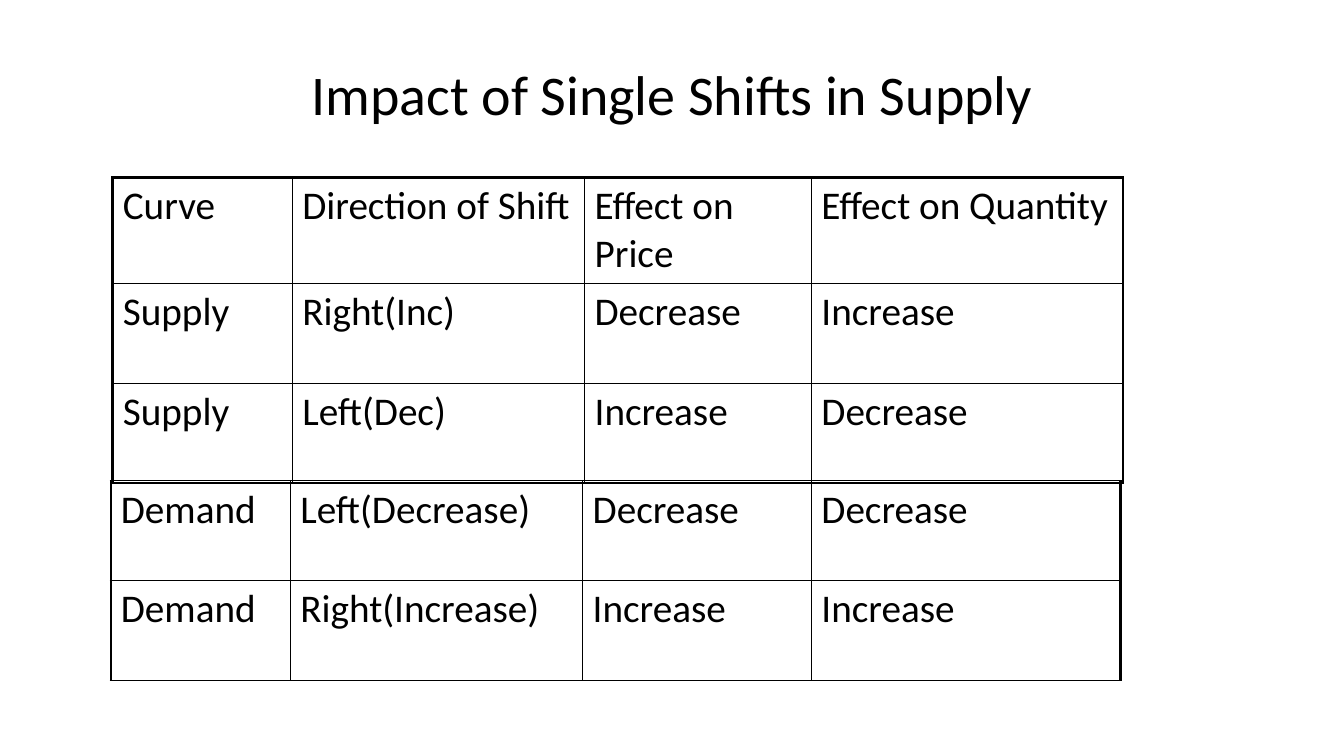
from dataclasses import dataclass

from lxml.etree import SubElement
from pptx import Presentation
from pptx.dml.color import RGBColor
from pptx.enum.text import MSO_ANCHOR, PP_ALIGN
from pptx.oxml.ns import qn
from pptx.util import Pt


@dataclass(frozen=True)
class Theme:
    font: str = "Calibri"
    ink: str = "000000"
    title_size: float = 40
    cell_size: float = 28
    thin: float = 1
    thick: float = 2.25


class SlideBuilder:
    def __init__(self, slide, theme):
        self.slide = slide
        self.theme = theme

    def style(self, paragraph, size):
        for run in paragraph.runs:
            run.font.name = self.theme.font
            run.font.size = Pt(size)
            run.font.color.rgb = RGBColor.from_string(self.theme.ink)

    def title(self, text, left, top, width, height):
        heading = self.slide.shapes.add_textbox(Pt(left), Pt(top), Pt(width), Pt(height))
        frame = heading.text_frame
        frame.word_wrap = True
        frame.vertical_anchor = MSO_ANCHOR.MIDDLE
        frame.text = text
        frame.paragraphs[0].alignment = PP_ALIGN.CENTER
        self.style(frame.paragraphs[0], self.theme.title_size)

    def border(self, cell, side, width):
        line = SubElement(cell._tc.get_or_add_tcPr(), qn(f"a:ln{side}"), w=str(Pt(width)))
        fill = SubElement(line, qn("a:solidFill"))
        SubElement(fill, qn("a:srgbClr"), val=self.theme.ink)

    def table(self, rows, left, top, widths, heights, thick_sides):
        """Draw a grid of thin lines whose named outer sides are thick."""
        frame = self.slide.shapes.add_table(
            len(rows), len(widths), Pt(left), Pt(top), Pt(sum(widths)), Pt(sum(heights)))
        grid = frame.table
        grid.first_row = grid.horz_banding = False
        for column, width in zip(grid.columns, widths):
            column.width = Pt(width)
        for row, height in zip(grid.rows, heights):
            row.height = Pt(height)

        for r, entries in enumerate(rows):
            for c, entry in enumerate(entries):
                cell = grid.cell(r, c)
                cell.text_frame.text = entry
                self.style(cell.text_frame.paragraphs[0], self.theme.cell_size)
                outer = {"L": c == 0, "R": c == len(widths) - 1,
                         "T": r == 0, "B": r == len(rows) - 1}
                for side, is_outer in outer.items():
                    heavy = is_outer and side in thick_sides
                    self.border(cell, side, self.theme.thick if heavy else self.theme.thin)
                cell.fill.background()


SUPPLY_SHIFTS = [
    ["Curve", "Direction of Shift", "Effect on Price", "Effect on Quantity"],
    ["Supply", "Right(Inc)", "Decrease", "Increase"],
    ["Supply", "Left(Dec)", "Increase", "Decrease"],
]
DEMAND_SHIFTS = [
    ["Demand", "Left(Decrease)", "Decrease", "Decrease"],
    ["Demand", "Right(Increase)", "Increase", "Increase"],
]
ROW_HEIGHT = 71.3


def main():
    deck = Presentation()
    deck.slide_width, deck.slide_height = Pt(960), Pt(540)
    builder = SlideBuilder(deck.slides.add_slide(deck.slide_layouts[6]), Theme())

    # Supply table with its header row
    builder.table(SUPPLY_SHIFTS, 80.6, 126.7, [128.2, 208.8, 162, 222.5],
                  [74.2, ROW_HEIGHT, ROW_HEIGHT], "LRTB")

    # Demand table, joined on below
    builder.table(DEMAND_SHIFTS, 79.2, 343.4, [128.2, 208.8, 163.4, 221],
                  [ROW_HEIGHT] * 2, "LR")

    # Title
    builder.title("Impact of Single Shifts in Supply", 48, 21.6, 864, 90)

    deck.save("out.pptx")


if __name__ == "__main__":
    main()
